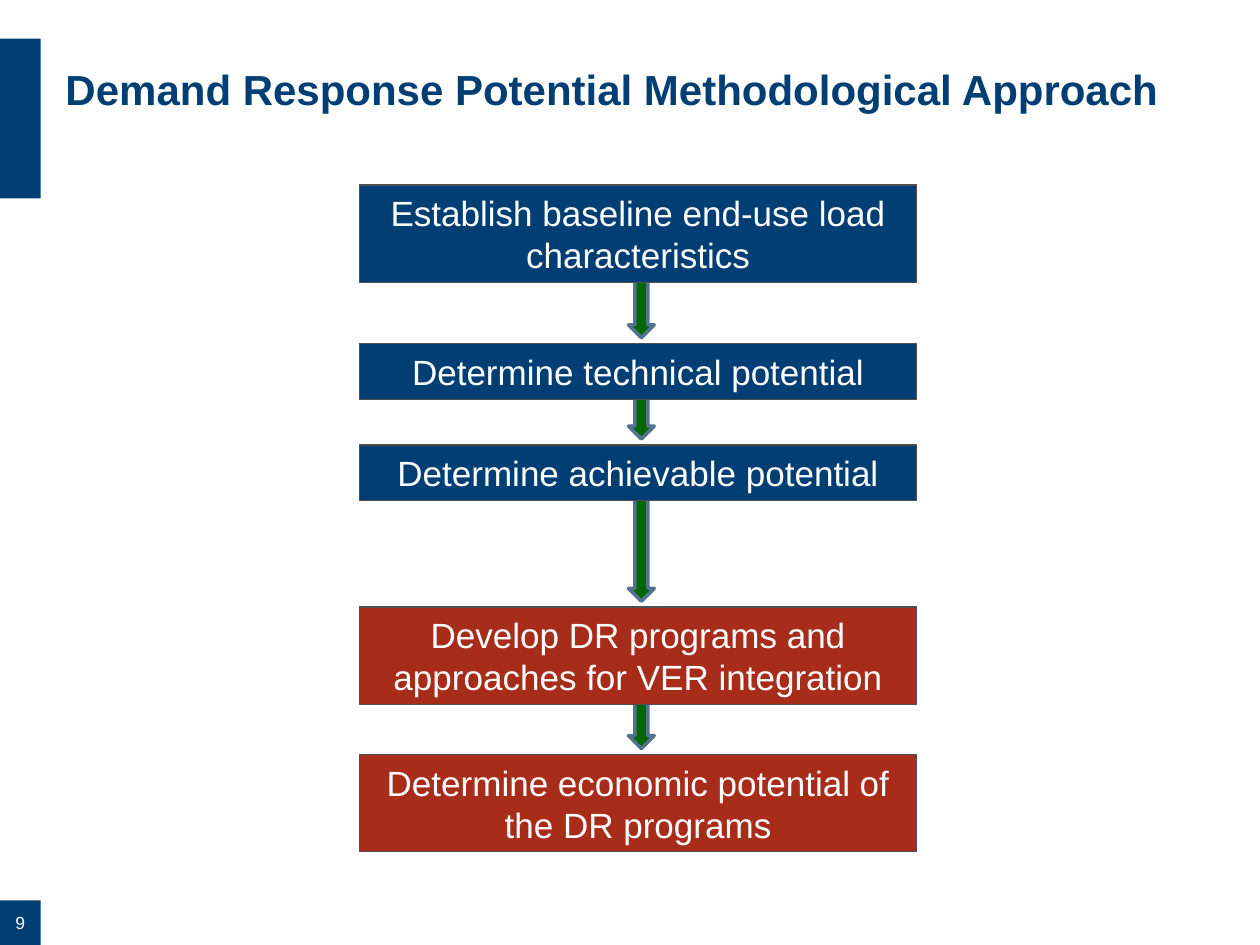
from collections import namedtuple
from dataclasses import dataclass
from itertools import pairwise

from pptx import Presentation
from pptx.dml.color import RGBColor
from pptx.enum.shapes import MSO_SHAPE
from pptx.enum.text import MSO_ANCHOR, PP_ALIGN
from pptx.util import Cm, Pt

Box = namedtuple("Box", "left top width height")
Step = namedtuple("Step", "wording top height color")


@dataclass(frozen=True)
class Theme:
    font: str = "Arial"
    navy: RGBColor = RGBColor(0x00, 0x3E, 0x74)
    red: RGBColor = RGBColor(0xA7, 0x2D, 0x1A)
    green: RGBColor = RGBColor(0x00, 0x66, 0x00)
    steel: RGBColor = RGBColor(0x54, 0x71, 0x92)
    gray: RGBColor = RGBColor(0x4F, 0x4F, 0x4F)
    white: RGBColor = RGBColor(0xFF, 0xFF, 0xFF)
    title_size: Pt = Pt(24)
    step_size: Pt = Pt(20)
    number_size: Pt = Pt(10)


THEME = Theme()
ONE_LINE, TWO_LINES = Cm(1.12), Cm(1.96)
STEPS = [
    Step("Establish baseline end-use load characteristics", Cm(0), TWO_LINES, THEME.navy),
    Step("Determine technical potential", Cm(3.2), ONE_LINE, THEME.navy),
    Step("Determine achievable potential", Cm(5.24), ONE_LINE, THEME.navy),
    Step("Develop DR programs and approaches for VER integration", Cm(8.51), TWO_LINES, THEME.red),
    Step("Determine economic potential of the DR programs", Cm(11.48), TWO_LINES, THEME.red),
]


def write(frame, wording, size, color, alignment=PP_ALIGN.CENTER, bold=False):
    frame.word_wrap = True
    para = frame.paragraphs[0]
    para.text = wording
    para.alignment = alignment
    font = para.font
    font.name, font.size, font.bold = THEME.font, size, bold
    font.color.rgb = color


def clear_margins(frame):
    frame.margin_left = frame.margin_top = frame.margin_right = frame.margin_bottom = 0


def add_filled_shape(page, kind, box, fill, line=None, line_width=None):
    shape = page.shapes.add_shape(kind, *box)
    shape.shadow.inherit = False
    shape.fill.solid()
    shape.fill.fore_color.rgb = fill
    if line is None:
        shape.line.fill.background()
    else:
        shape.line.color.rgb = line
        shape.line.width = line_width
    return shape


def add_side_band(page, box, number):
    left, top, width, height = box
    number_height = Cm(0.9)
    add_filled_shape(page, MSO_SHAPE.RECTANGLE, Box(left, top, width, Cm(3.22)), THEME.navy)
    number_box = Box(left, top + height - number_height, width, number_height)
    tile = add_filled_shape(page, MSO_SHAPE.RECTANGLE, number_box, THEME.navy)
    clear_margins(tile.text_frame)
    tile.text_frame.vertical_anchor = MSO_ANCHOR.MIDDLE
    write(tile.text_frame, number, THEME.number_size, THEME.white)


def add_title(page, box, wording):
    title = page.shapes.title
    title.left, title.top, title.width, title.height = box
    frame = title.text_frame
    clear_margins(frame)
    frame.margin_top = Cm(0.1)
    frame.vertical_anchor = MSO_ANCHOR.TOP
    write(frame, wording, THEME.title_size, THEME.navy, PP_ALIGN.LEFT, bold=True)


def add_flow(page, box, steps):
    arrow_width, overlap, gap = Cm(0.52), Cm(0.15), Cm(0.12)
    arrow_left = box.left + Cm(5.42)
    for upper, lower in pairwise(steps):
        start = upper.top + upper.height - overlap
        arrow_box = Box(arrow_left, box.top + start, arrow_width, lower.top - gap - start)
        add_filled_shape(page, MSO_SHAPE.DOWN_ARROW, arrow_box, THEME.green, THEME.steel, Pt(2))
    for step in steps:
        step_box = Box(box.left, box.top + step.top, box.width, step.height)
        shape = add_filled_shape(
            page, MSO_SHAPE.RECTANGLE, step_box, step.color, THEME.gray, Pt(0.75)
        )
        shape.text_frame.vertical_anchor = MSO_ANCHOR.MIDDLE
        write(shape.text_frame, step.wording, THEME.step_size, THEME.white)


def main():
    deck = Presentation()
    deck.slide_width, deck.slide_height = Cm(25.4), Cm(19.05)
    page = deck.slides.add_slide(deck.slide_layouts[5])
    add_side_band(page, Box(Cm(0), Cm(0.78), Cm(0.82), Cm(18.27)), "9")
    add_title(
        page,
        Box(Cm(1.32), Cm(1.17), Cm(22.5), Cm(1.3)),
        "Demand Response Potential Methodological Approach",
    )
    add_flow(page, Box(Cm(7.25), Cm(3.73), Cm(11.23), Cm(13.44)), STEPS)
    deck.save("out.pptx")


if __name__ == "__main__":
    main()
